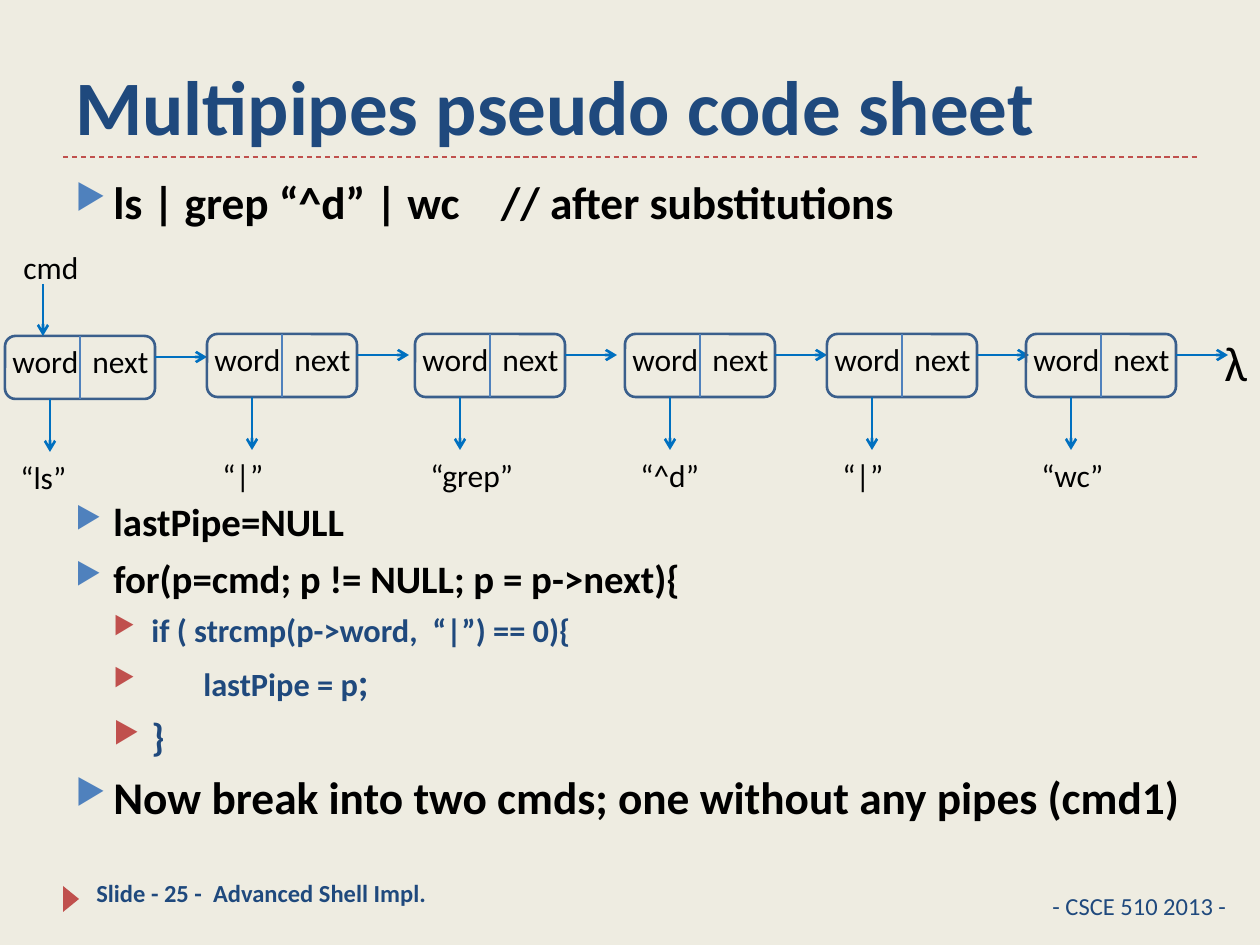
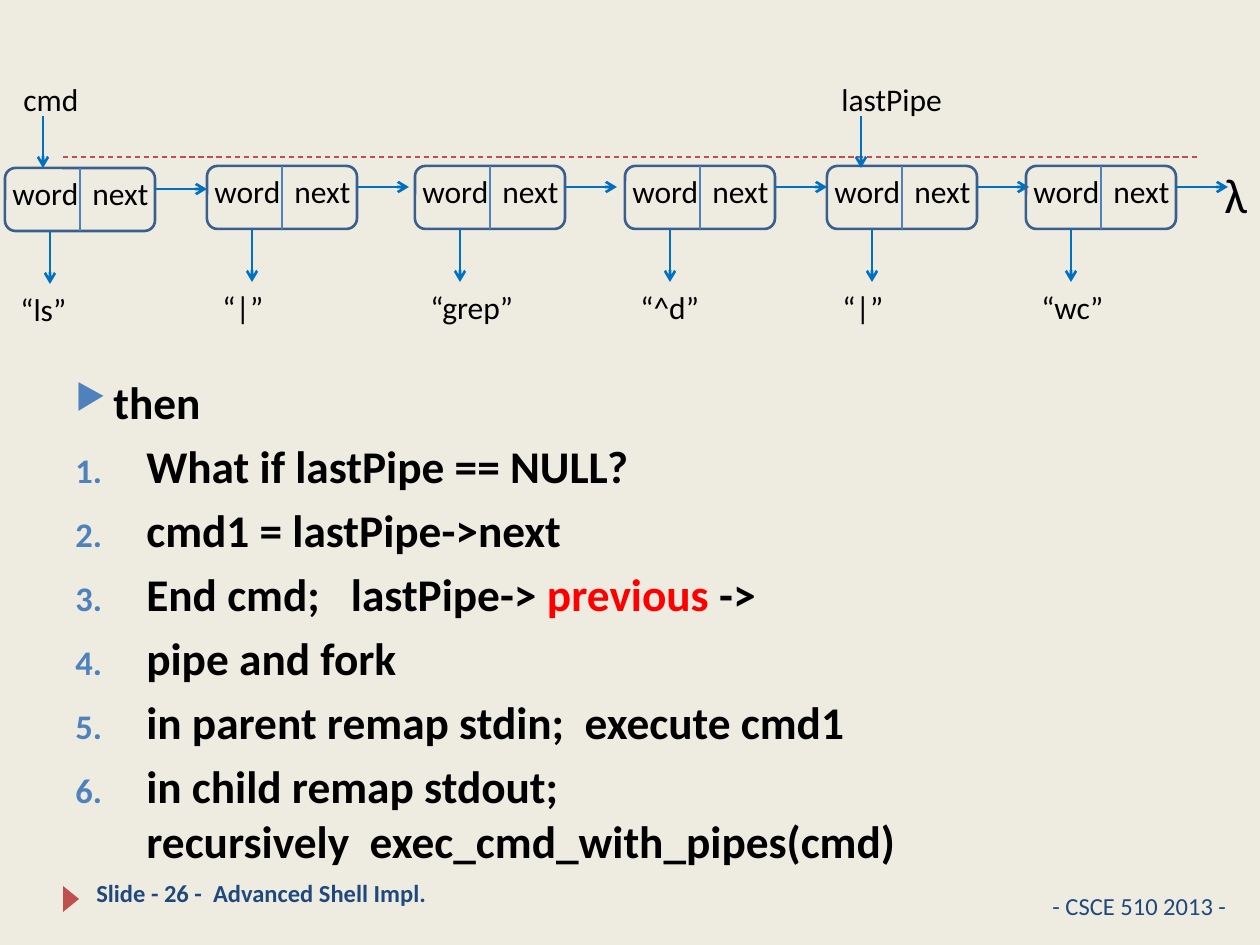
from dataclasses import dataclass
from typing import NamedTuple, Optional

from lxml import etree
from pptx import Presentation
from pptx.dml.color import RGBColor
from pptx.enum import dml, shapes, text
from pptx.oxml.ns import qn
from pptx import util as u

PX = 914400 / 126
FONT = "Calibri"
COLORS = {
    "paper": "EEECE1", "navy": "1F497D", "red": "C0504D", "blue": "4F81BD",
    "arrow": "0070C0", "box": "3A5F8C", "black": "000000", "alert": "FF0000",
}
NODE_W, NODE_H = 150, 63
BIG, MEDIUM, SMALL = 25.9, 22.2, 18.5


class Node(NamedTuple):
    """A list cell and the word it holds."""
    left: int
    word: str
    word_width: int
    drop: int = 0


class Pointer(NamedTuple):
    """A named variable that points down at a cell."""
    x: int
    name: str
    width: int


class Run(NamedTuple):
    """A piece of text; None keeps the format of its paragraph."""
    words: str
    size: Optional[float] = None
    color: Optional[str] = None
    spacing: int = 0


@dataclass
class Para:
    """A bulleted paragraph."""
    runs: list[Run]
    size: float = BIG
    color: str = "black"
    bullet_color: str = "blue"
    margin: int = 38
    hang: int = 38
    before: float = 5.5
    numbered: bool = False


NODES = [
    Node(5, "“ls”", 71, 2), Node(207, "“|”", 67), Node(415, "“grep”", 110),
    Node(625, "“^d”", 84), Node(827, "“|”", 67), Node(1026, "“wc”", 88),
]
CMD = Pointer(43, "cmd", 81)
LAST_PIPE = Pointer(861, "lastPipe", 127)


def px(n: float) -> u.Emu:
    """Turn px into EMU."""
    return u.Emu(round(n * PX))


def rgb(name: str) -> RGBColor:
    """Look up a named colour."""
    return RGBColor.from_string(COLORS[name])


def style_font(font, size: float, color: str, bold: bool) -> None:
    """Set typeface, size, colour and weight."""
    font.name, font.size, font.bold = FONT, u.Pt(size), bold
    font.color.rgb = rgb(color)


def add_box(slide, left: int, top: int, width: int, height: int):
    """Add an empty text box that wraps and return its text frame."""
    tf = slide.shapes.add_textbox(px(left), px(top), px(width), px(height)).text_frame
    tf.word_wrap = True
    return tf


def add_text(slide, words: str, left: int, top: int, width: int, height: int = 50, *,
             size: float = 18, color: str = "black", bold: bool = False,
             wrap: bool = False, anchor=text.MSO_ANCHOR.TOP) -> None:
    """Add one line of formatted text."""
    tf = add_box(slide, left, top, width, height)
    tf.word_wrap, tf.vertical_anchor = wrap, anchor
    if not wrap:
        tf.auto_size = text.MSO_AUTO_SIZE.SHAPE_TO_FIT_TEXT
    r = tf.paragraphs[0].add_run()
    r.text = words
    style_font(r.font, size, color, bold)


def add_line(slide, x1: int, y1: int, x2: int, y2: int, *, color: str = "arrow",
             width: float = 1.5, arrow: bool = True, dashed: bool = False):
    """Add a straight line, by default an arrow."""
    sp = slide.shapes.add_connector(
        shapes.MSO_CONNECTOR.STRAIGHT, px(x1), px(y1), px(x2), px(y2))
    sp.line.color.rgb, sp.line.width = rgb(color), u.Pt(width)
    if dashed:
        sp.line.dash_style = dml.MSO_LINE.DASH
    if arrow:
        etree.SubElement(sp.line._get_or_add_ln(), qn("a:tailEnd"), type="arrow")
    etree.SubElement(sp._element.spPr, qn("a:effectLst"))
    return sp


def add_bullet(p, para: Para) -> None:
    """Give a paragraph its hanging indent and its triangle or number."""
    pPr = p._p.get_or_add_pPr()
    pPr.set("marL", str(px(para.margin)))
    pPr.set("indent", str(-px(para.hang)))
    clr = etree.SubElement(pPr, qn("a:buClr"))
    etree.SubElement(clr, qn("a:srgbClr"), val=COLORS[para.bullet_color])
    etree.SubElement(pPr, qn("a:buSzPct"), val="76000")
    if para.numbered:
        etree.SubElement(pPr, qn("a:buAutoNum"), type="arabicPeriod")
    else:
        etree.SubElement(pPr, qn("a:buChar"), char="▶")


def add_body(slide, top: int, height: int, paras: list[Para]) -> None:
    """Add the bulleted body text."""
    tf = add_box(slide, 63, top, 1197, height)
    for i, para in enumerate(paras):
        p = tf.add_paragraph() if i else tf.paragraphs[0]
        p.space_before = u.Pt(para.before)
        add_bullet(p, para)
        for run in para.runs:
            if run.words == "\n":
                p.add_line_break()
                continue
            r = p.add_run()
            r.text = run.words
            style_font(r.font, run.size or para.size, run.color or para.color, True)
            if run.spacing:
                r._r.get_or_add_rPr().set("spc", str(run.spacing))


def add_node(slide, node: Node, top: int) -> None:
    """Draw a cell with its two fields, its link and its word."""
    x, y = node.left, top + node.drop
    add_text(slide, "next", x + 75, y, 82)
    add_text(slide, "word", x - 5, y, 92)
    sp = slide.shapes.add_shape(
        shapes.MSO_SHAPE.ROUNDED_RECTANGLE, px(x), px(y), px(NODE_W), px(NODE_H))
    sp.shadow.inherit = False
    sp.fill.background()
    sp.line.color.rgb, sp.line.width = rgb("box"), u.Pt(1.5)
    mid = x + NODE_W // 2
    divider = add_line(slide, mid, y, mid, y + NODE_H,
                       color="blue", width=0.75, arrow=False)
    divider.begin_connect(sp, 0)
    divider.end_connect(sp, 2)
    add_line(slide, x + NODE_W, y + 21, x + NODE_W + 52, y + 21)
    add_line(slide, x + 45, y + NODE_H, x + 45, y + NODE_H + 53)
    add_text(slide, node.word, x + 3, y + NODE_H + 53, node.word_width)


def add_list(slide, top: int, pointers: list[Pointer]) -> None:
    """Draw the linked list and the variables that point into it."""
    for node in NODES:
        add_node(slide, node, top)
    add_text(slide, "λ", 1212, top - 8, 48, 72, size=28)
    for ptr in pointers:
        add_line(slide, ptr.x, top - 50, ptr.x, top + 2)
        add_text(slide, ptr.name, ptr.x - 32, top - 92, ptr.width)


def new_slide(prs, number: int):
    """Add a slide with background, rule and footers."""
    slide = prs.slides.add_slide(prs.slide_layouts[6])
    slide.background.fill.solid()
    slide.background.fill.fore_color.rgb = rgb("paper")
    add_line(slide, 63, 157, 1197, 157, color="red", width=0.75,
             arrow=False, dashed=True)
    sp = slide.shapes.add_shape(
        shapes.MSO_SHAPE.ISOSCELES_TRIANGLE, px(58), px(891), px(26), px(16))
    sp.rotation = 90
    sp.shadow.inherit = False
    sp.fill.solid()
    sp.fill.fore_color.rgb = rgb("red")
    sp.line.fill.background()
    add_text(slide, "- CSCE 510 2013 -", 1040, 885, 210,
             size=14, color="navy", wrap=True)
    add_text(slide, f"Slide - {number} -  Advanced Shell Impl.", 84, 872, 368,
             size=14, color="navy", bold=True, wrap=True)
    return slide


def code(*runs: Run, size: float = SMALL, margin: int = 76, hang: int = 38) -> Para:
    """Make a second-level line of code."""
    return Para(list(runs), size, "navy", "red", margin, hang, 5)


def step(*runs: Run) -> Para:
    """Make a numbered step."""
    return Para(list(runs), margin=71, hang=71, numbered=True)


def build_pseudo_code(prs) -> None:
    """Build the slide that finds the last pipe."""
    slide = new_slide(prs, 25)
    add_text(slide, "Multipipes pseudo code sheet", 63, 21, 1134, 136, size=44,
             color="navy", bold=True, wrap=True, anchor=text.MSO_ANCHOR.BOTTOM)
    add_body(slide, 168, 680, [
        Para([Run("ls | grep “^d” | wc"), Run(" ", spacing=1750),
              Run("// after substitutions")]),
        Para([Run("lastPipe=NULL")], MEDIUM, before=154),
        Para([Run("for(p=cmd; p != NULL; p = p->next){")], MEDIUM),
        code(Run("if ( strcmp(p->word,  “|”) == 0){")),
        code(Run("lastPipe = p"), Run(";", MEDIUM), margin=128, hang=90),
        code(Run("}"), size=MEDIUM),
        Para([Run("Now break into two cmds; one without any pipes (cmd1)")]),
    ])
    add_list(slide, 334, [CMD])


def build_split_steps(prs) -> None:
    """Build the slide that splits the list at the last pipe."""
    slide = new_slide(prs, 26)
    add_body(slide, 368, 481, [
        Para([Run("then")]),
        step(Run("What if lastPipe == NULL?")),
        step(Run("cmd1 = lastPipe->next")),
        step(Run("End cmd;"), Run(" ", spacing=1170), Run("lastPipe-> "),
             Run("previous ", color="alert"), Run("->")),
        step(Run("pipe and fork")),
        step(Run("in parent remap stdin;  execute cmd1")),
        step(Run("in child remap stdout;"), Run("\n"),
             Run("recursively  exec_cmd_with_pipes(cmd)")),
    ])
    add_list(slide, 166, [CMD, LAST_PIPE])


def main() -> None:
    """Build and save the presentation."""
    prs = Presentation()
    prs.slide_width, prs.slide_height = px(1260), px(945)
    build_pseudo_code(prs)
    build_split_steps(prs)
    prs.save("out.pptx")


if __name__ == "__main__":
    main()
